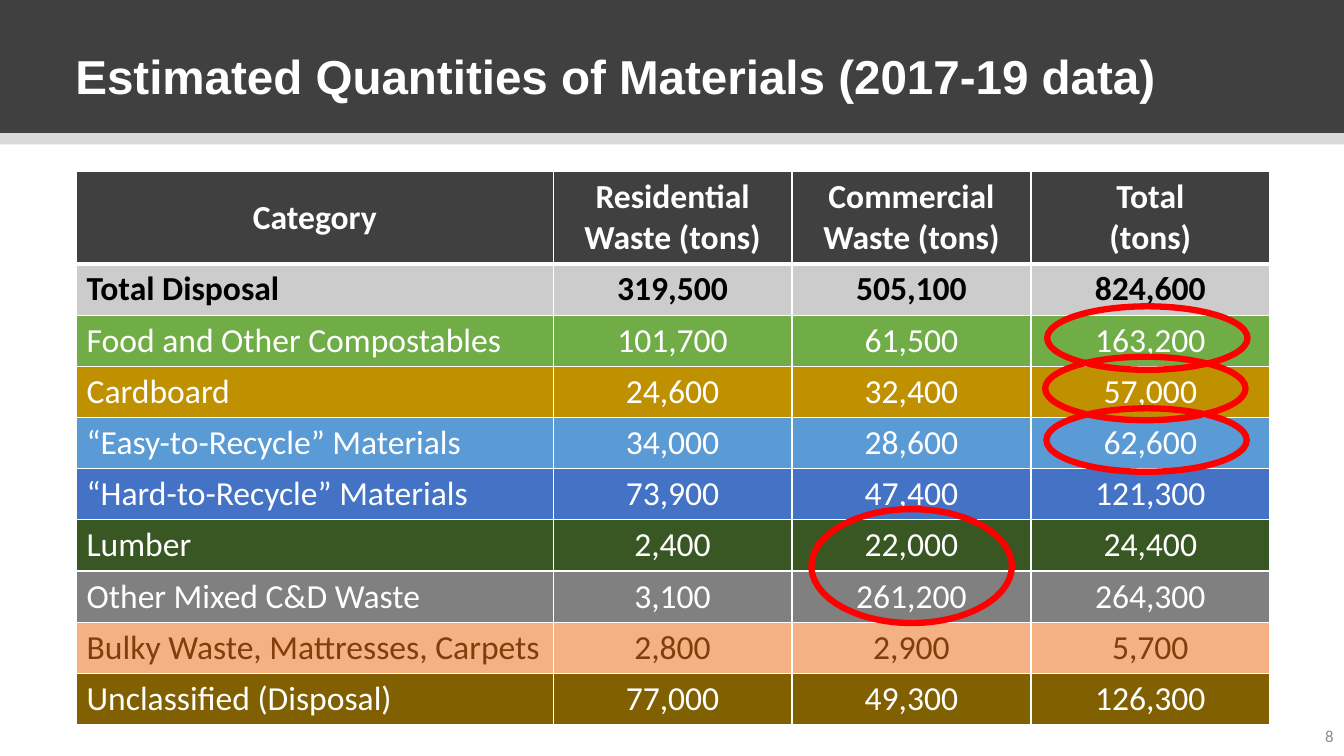
from lxml import etree
from pptx import Presentation
from pptx.dml.color import RGBColor
from pptx.enum.shapes import MSO_SHAPE
from pptx.enum.text import MSO_ANCHOR, PP_ALIGN
from pptx.oxml.ns import qn
from pptx.util import Cm, Pt

RECT, OVAL = MSO_SHAPE.RECTANGLE, MSO_SHAPE.OVAL
LEFT, CENTER, RIGHT = PP_ALIGN.LEFT, PP_ALIGN.CENTER, PP_ALIGN.RIGHT
MIDDLE = MSO_ANCHOR.MIDDLE

COLORS = {
    "white": "FFFFFF", "black": "000000", "dark": "404040", "light": "D9D9D9",
    "silver": "CCCCCC", "green": "70AD47", "gold": "BF9000", "sky": "5B9BD5",
    "blue": "4472C4", "forest": "385723", "gray": "808080", "peach": "F4B183",
    "rust": "843C0B", "olive": "806000", "red": "FF0000", "number": "8C8C8C",
}

HEADER = ["Category", "Residential Waste (tons)", "Commercial Waste (tons)", "Total\n(tons)"]
ROWS = [
    ("silver", "black", ["Total Disposal", "319,500", "505,100", "824,600"]),
    ("green", "white", ["Food and Other Compostables", "101,700", "61,500", "163,200"]),
    ("gold", "white", ["Cardboard", "24,600", "32,400", "57,000"]),
    ("sky", "white", ["“Easy-to-Recycle” Materials", "34,000", "28,600", "62,600"]),
    ("blue", "white", ["“Hard-to-Recycle” Materials", "73,900", "47,400", "121,300"]),
    ("forest", "white", ["Lumber", "2,400", "22,000", "24,400"]),
    ("gray", "white", ["Other Mixed C&D Waste", "3,100", "261,200", "264,300"]),
    ("peach", "rust", ["Bulky Waste, Mattresses, Carpets", "2,800", "2,900", "5,700"]),
    ("olive", "white", ["Unclassified (Disposal)", "77,000", "49,300", "126,300"]),
]
HIGHLIGHTS = [
    (26.39, 7.72, 5.05, 1.6),
    (20.45, 12.83, 5.05, 2.87),
    (26.34, 8.99, 5.05, 1.6),
    (26.37, 10.29, 5.05, 1.6),
]


def rgb(name):
    return RGBColor.from_string(COLORS[name])


class SlideBuilder:
    """Draws styled elements on the current slide."""

    def __init__(self, prs):
        self.s = prs.slides.add_slide(prs.slide_layouts[6])
        self.font = {"name": "Calibri", "size": Pt(24), "bold": False}

    def fill_text(self, tf, text, color, align=LEFT, **changes):
        tf.text = text
        for p in tf.paragraphs:
            p.alignment = align
            for r in p.runs:
                for key, value in {**self.font, **changes}.items():
                    setattr(r.font, key, value)
                r.font.color.rgb = rgb(color)

    def shape(self, kind, box, fill=None, line=None, width=4.5):
        sp = self.s.shapes.add_shape(kind, *map(Cm, box))
        sp.shadow.inherit = False
        if fill:
            sp.fill.solid()
            sp.fill.fore_color.rgb = rgb(fill)
        else:
            sp.fill.background()
        if line:
            sp.line.color.rgb = rgb(line)
            sp.line.width = Pt(width)
        else:
            sp.line.fill.background()

    def text(self, box, text, color, align=LEFT, spacing=1.0, **changes):
        tf = self.s.shapes.add_textbox(*map(Cm, box)).text_frame
        tf.word_wrap = True
        tf.vertical_anchor = MIDDLE
        self.fill_text(tf, text, color, align, **changes)
        tf.paragraphs[0].line_spacing = spacing

    def borders(self, cell, top, bottom):
        tcPr = cell._tc.get_or_add_tcPr()
        widths = {"lnL": 1, "lnR": 1, "lnT": top, "lnB": bottom}
        for i, (side, width) in enumerate(widths.items()):
            ln = etree.Element(qn(f"a:{side}"), w=str(Pt(width)))
            fill = etree.SubElement(ln, qn("a:solidFill"))
            etree.SubElement(fill, qn("a:srgbClr"), val=COLORS["white"])
            tcPr.insert(i, ln)

    def table(self, left, top, widths, heights, rows):
        box = map(Cm, (left, top, sum(widths), sum(heights)))
        table = self.s.shapes.add_table(len(rows), len(widths), *box).table
        table.horz_banding = False
        for col, width in zip(table.columns, widths):
            col.width = Cm(width)
        for i, (fill, color, values) in enumerate(rows):
            table.rows[i].height = Cm(heights[i])
            for j, value in enumerate(values):
                cell = table.cell(i, j)
                cell.vertical_anchor = MIDDLE
                cell.fill.solid()
                cell.fill.fore_color.rgb = rgb(fill)
                align = LEFT if i and not j else CENTER
                self.fill_text(cell.text_frame, value, color, align, bold=i < 2)
                if i and j == len(values) - 1:
                    for side in ("left", "right", "top", "bottom"):
                        setattr(cell, f"margin_{side}", 0)
                self.borders(cell, 3 if i == 1 else 1, 3 if i == 0 else 1)


def main():
    prs = Presentation()
    prs.slide_width, prs.slide_height = Cm(33.87), Cm(19.05)
    b = SlideBuilder(prs)
    b.shape(RECT, (-0.02, 3.23, 33.91, 0.41), "light")
    b.shape(RECT, (-0.02, 0, 33.91, 3.35), "dark")
    b.text((1.65, 1.02, 29.21, 1.93), "Estimated Quantities of Materials (2017-19 data)",
           "white", spacing=0.9, name="Arial", size=Pt(34), bold=True)
    b.text((32.84, 18.03, 1.02, 1.02), "8", "number", RIGHT, size=Pt(12))
    rows = [("dark", "white", HEADER)] + ROWS
    b.table(1.93, 4.32, [12.01] + [6.02] * 3, [2.33] + [1.29] * len(ROWS), rows)
    for box in HIGHLIGHTS:
        b.shape(OVAL, box, line="red")
    prs.save("out.pptx")


if __name__ == "__main__":
    main()
